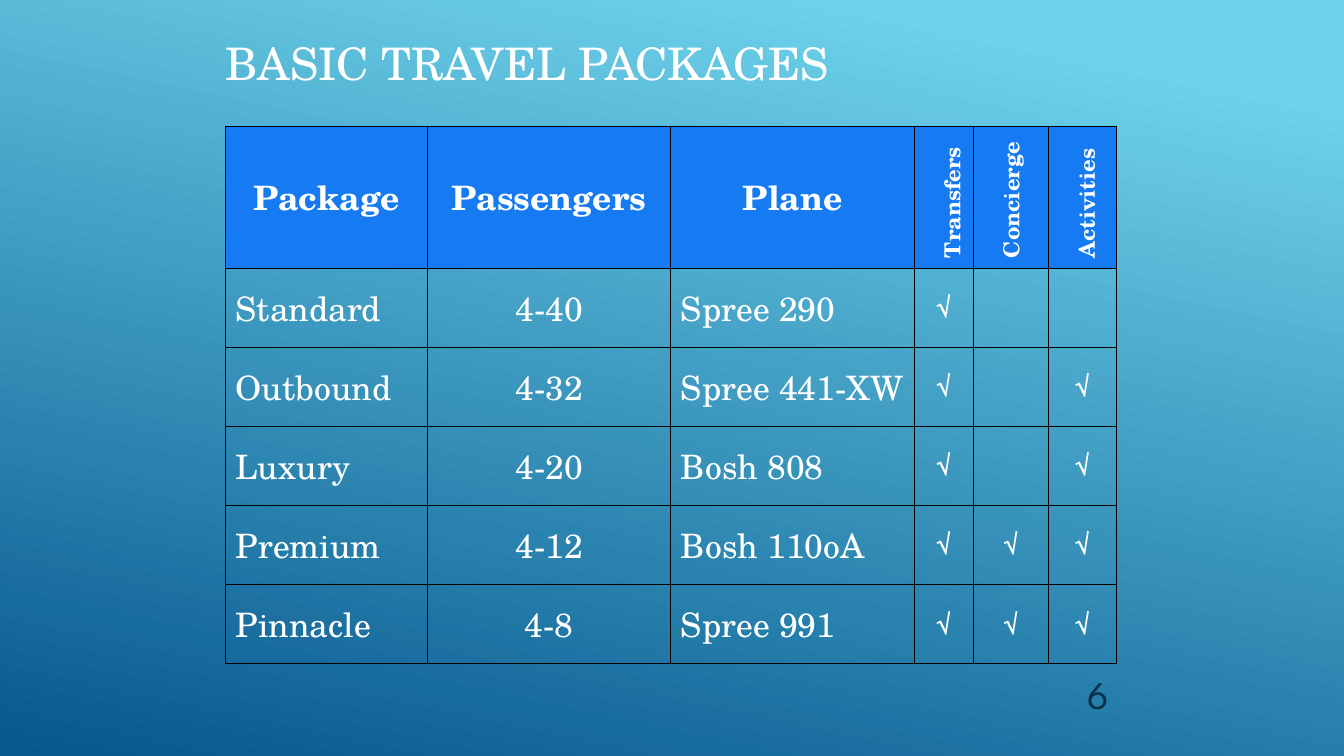
import pptx
import pptx.oxml
import pptx.oxml.ns
from pptx.dml.color import RGBColor
from pptx.enum.text import MSO_ANCHOR, PP_ALIGN
from pptx.util import Pt

COLORS = {
    "sky": "6ED2EB",
    "deep": "06588E",
    "header": "167BF3",
    "text": "FFFFFF",
    "border": "000000",
    "number": "0A304A",
}
SERIF = "TeX Gyre Schola"
SANS = "League Spartan"

COLUMN_WIDTHS = [192, 232, 232, 56, 72, 64]
HEADER_HEIGHT, ROW_HEIGHT = 135.4, 75.3
HEADINGS = ["Package", "Passengers", "Plane", "Transfers", "Concierge", "Activities"]
FIRST_SERVICE = 3
PACKAGES = [
    ["Standard", "4-40", "Spree 290", "√", "", ""],
    ["Outbound", "4-32", "Spree 441-XW", "√", "", "√"],
    ["Luxury", "4-20", "Bosh 808", "√", "", "√"],
    ["Premium", "4-12", "Bosh 110oA", "√", "√", "√"],
    ["Pinnacle", "4-8", "Spree 991", "√", "√", "√"],
]


def rgb(name):
    return RGBColor.from_string(COLORS[name])


def add_run(paragraph, text, size, font=SERIF, color="text", bold=False):
    run = paragraph.add_run()
    run.text = text
    run.font.size = Pt(size)
    run.font.name = font
    run.font.bold = bold
    run.font.color.rgb = rgb(color)


def paint_background(slide):
    fill = slide.background.fill
    fill.gradient()
    fill.gradient_angle = 258
    for stop, color, position in zip(fill.gradient_stops, ("sky", "deep"), (0.1, 1)):
        stop.color.rgb = rgb(color)
        stop.position = position


def place_title(slide, left, top, width, height):
    title = slide.shapes.title
    title.left, title.top, title.width, title.height = map(Pt, (left, top, width, height))
    frame = title.text_frame
    frame.vertical_anchor = MSO_ANCHOR.MIDDLE
    paragraph = frame.paragraphs[0]
    paragraph.alignment = PP_ALIGN.LEFT
    add_run(paragraph, "BASIC TRAVEL PACKAGES", 42.7)


def add_borders(cell):
    """Draw a thin line on all four sides; lines must precede the cell fill."""
    properties = cell._tc.get_or_add_tcPr()
    for index, side in enumerate(("lnL", "lnR", "lnT", "lnB")):
        line = pptx.oxml.parse_xml(
            f'<a:{side} {pptx.oxml.ns.nsdecls("a")} w="{Pt(1)}">'
            f'<a:solidFill><a:srgbClr val="{COLORS["border"]}"/></a:solidFill></a:{side}>'
        )
        properties.insert(index, line)


def fill_cell(cell, text, column, is_header):
    is_service = column >= FIRST_SERVICE
    is_rotated = is_header and is_service
    cell.vertical_anchor = MSO_ANCHOR.MIDDLE
    cell.margin_left = cell.margin_right = Pt(9.6)
    cell.margin_top = Pt(19.2 if is_rotated else 4.8)
    cell.margin_bottom = Pt(4.8)
    if is_header:
        cell.fill.solid()
        cell.fill.fore_color.rgb = rgb("header")
    else:
        cell.fill.background()
    add_borders(cell)
    if is_rotated:
        cell._tc.get_or_add_tcPr().set("vert", "vert270")

    if is_header:
        size, centered = (21 if is_service else 32), not is_service
    else:
        size, centered = (24 if is_service else 32), column == 1 or is_service
    paragraph = cell.text_frame.paragraphs[0]
    paragraph.alignment = PP_ALIGN.CENTER if centered else PP_ALIGN.LEFT
    if text:
        add_run(paragraph, text, size, bold=is_header)


def add_package_table(slide, left, top):
    rows = [HEADINGS] + PACKAGES
    heights = [HEADER_HEIGHT] + [ROW_HEIGHT] * len(PACKAGES)
    table = slide.shapes.add_table(
        len(rows), len(HEADINGS), Pt(left), Pt(top),
        Pt(sum(COLUMN_WIDTHS)), Pt(sum(heights)),
    ).table
    table.horz_banding = False
    for column, width in zip(table.columns, COLUMN_WIDTHS):
        column.width = Pt(width)
    for row_index, (texts, height) in enumerate(zip(rows, heights)):
        table.rows[row_index].height = Pt(height)
        for column, text in enumerate(texts):
            fill_cell(table.cell(row_index, column), text, column, row_index == 0)


def add_page_number(slide, left, top, width, height):
    frame = slide.shapes.add_textbox(Pt(left), Pt(top), Pt(width), Pt(height)).text_frame
    frame.word_wrap = True
    frame.vertical_anchor = MSO_ANCHOR.BOTTOM
    frame.margin_left = frame.margin_right = Pt(9.6)
    frame.margin_top = frame.margin_bottom = Pt(4.8)
    paragraph = frame.paragraphs[0]
    paragraph.alignment = PP_ALIGN.RIGHT
    add_run(paragraph, "6", 37.3, SANS, "number")


def main():
    presentation = pptx.Presentation()
    presentation.slide_width, presentation.slide_height = Pt(1280), Pt(720)
    slide = presentation.slides.add_slide(presentation.slide_layouts[5])
    paint_background(slide)
    place_title(slide, 208, 0, 688, 120)
    add_package_table(slide, 215, 120)
    add_page_number(slide, 976, 618, 90, 70.4)
    presentation.save("out.pptx")


if __name__ == "__main__":
    main()
